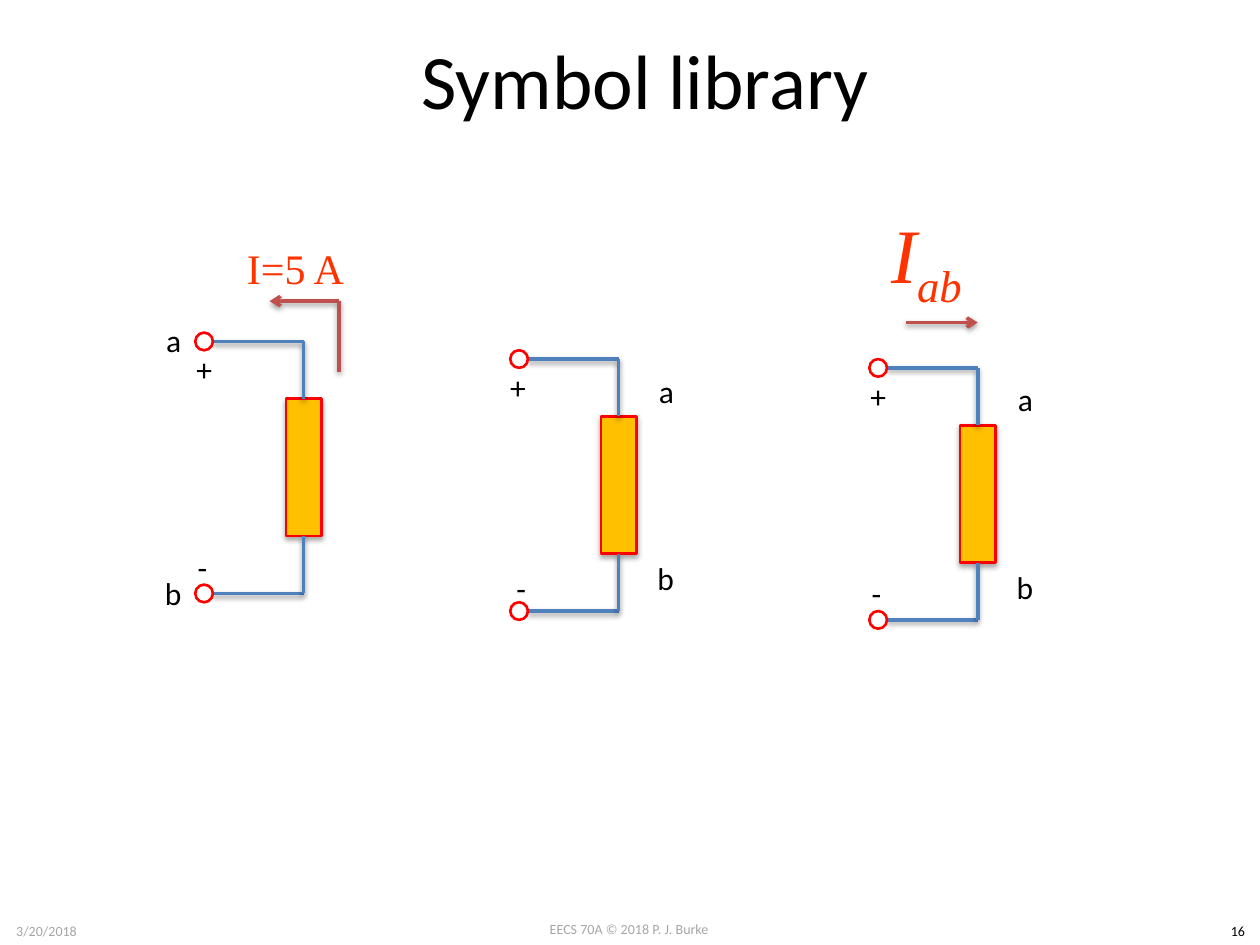
from lxml import etree
from pptx import Presentation
from pptx.dml.color import RGBColor
from pptx.enum import shapes, text
from pptx.oxml import ns
from pptx.util import Inches, Pt

COLORS = {"black": "000000", "gray": "A6A6A6", "wire": "4F81BD", "arrow": "C0504D",
          "current": "FF3300", "outline": "FF0000", "body": "FFC000"}

TITLE = "Symbol library"
FOOTERS = [  # text, box, colour
    ("EECS 70A © 2018 P. J. Burke", (3.83, 7.26, 2.33, 0.24), "gray"),
    ("3/20/2018", (0, 7.27, 0.74, 0.24), "gray"),
    ("16", (9.65, 7.27, 0.35, 0.24), "black"),
]
# Centre of each symbol's upper terminal; label positions are relative to it.
SYMBOLS = [
    {"origin": (4.12, 2.85),
     "labels": {"a": (1.01, 0.05), "b": (1.0, 1.54), "+": (-0.17, 0.02), "-": (-0.12, 1.62)}},
    {"origin": (6.97, 2.92),
     "labels": {"a": (1.01, 0.05), "b": (1.0, 1.54), "+": (-0.16, 0.02), "-": (-0.15, 1.59)}},
    {"origin": (1.62, 2.71),
     "labels": {"a": (-0.4, -0.21), "b": (-0.41, 1.8), "+": (-0.16, 0.02), "-": (-0.15, 1.59)}},
]
LABEL_WIDTHS = {"a": 0.32, "b": 0.34, "+": 0.33, "-": 0.28}
CURRENT_LINES = [  # start, end, has arrowhead
    ((7.19, 2.56), (7.76, 2.56), True),
    ((2.69, 2.39), (2.14, 2.39), True),
    ((2.69, 2.95), (2.69, 2.39), False),
]
HEIGHT, RAIL = 2.0, 0.79
BODY_LENGTH, BODY_WIDTH = 1.09, 0.28
TERMINAL = 0.14


def color(name):
    return RGBColor.from_string(COLORS[name])


def add_shadow(shape, alpha, distance):
    """Cast a soft shadow straight down; alpha in percent, distance in points."""
    effects = etree.SubElement(shape._element.spPr, ns.qn("a:effectLst"))
    shadow = etree.SubElement(effects, ns.qn("a:outerShdw"), blurRad=str(Pt(3.1)),
                              dist=str(Pt(distance)), dir="5400000", rotWithShape="0")
    tint = etree.SubElement(shadow, ns.qn("a:srgbClr"), val=COLORS["black"])
    etree.SubElement(tint, ns.qn("a:alpha"), val=str(alpha * 1000))


def write(shape, content, size=18, font="Calibri", fill="black", align=text.PP_ALIGN.CENTER,
          anchor=text.MSO_ANCHOR.TOP, wrap=True, italic=False, subscript=""):
    frame = shape.text_frame
    frame.word_wrap = wrap
    frame.vertical_anchor = anchor
    paragraph = frame.paragraphs[0]
    paragraph.alignment = align
    for part in filter(None, (content, subscript)):
        run = paragraph.add_run()
        run.text = part
        run.font.size = Pt(size)
        run.font.name = font
        run.font.italic = italic
        run.font.color.rgb = color(fill)
    if subscript:
        run.font._element.set("baseline", "-25000")


def add_text(slide, content, box, **style):
    write(slide.shapes.add_textbox(*map(Inches, box)), content, **style)


def add_line(slide, start, end, stroke, arrowhead=False):
    line = slide.shapes.add_connector(shapes.MSO_CONNECTOR.STRAIGHT, *map(Inches, start + end))
    line.line.color.rgb = color(stroke)
    line.line.width = Pt(2)
    if arrowhead:
        etree.SubElement(line.line._get_or_add_ln(), ns.qn("a:tailEnd"), type="arrow")
    add_shadow(line, 38, 1.6)


def add_outlined(slide, kind, center, width, height):
    x, y = center
    box = (x - width / 2, y - height / 2, width, height)
    shape = slide.shapes.add_shape(kind, *map(Inches, box))
    shape.line.color.rgb = color("outline")
    shape.line.width = Pt(1.5)
    return shape


def add_symbol(slide, origin, labels):
    x, top = origin
    rail, bottom, middle = x + RAIL, top + HEIGHT, top + HEIGHT / 2

    body = add_outlined(slide, shapes.MSO_SHAPE.RECTANGLE, (rail, middle),
                        BODY_LENGTH, BODY_WIDTH)
    body.rotation = 90
    body.fill.solid()
    body.fill.fore_color.rgb = color("body")
    add_shadow(body, 35, 1.8)

    for y, body_end in ((bottom, middle + BODY_LENGTH / 2), (top, middle - BODY_LENGTH / 2)):
        add_line(slide, (x + TERMINAL / 2, y), (rail, y), "wire")
        add_line(slide, (rail, body_end), (rail, y), "wire")
        terminal = add_outlined(slide, shapes.MSO_SHAPE.OVAL, (x, y), TERMINAL, TERMINAL)
        terminal.fill.background()
        terminal.shadow.inherit = False

    for label, (dx, dy) in labels.items():
        add_text(slide, label, (x + dx, top + dy, LABEL_WIDTHS[label], 0.4),
                 align=text.PP_ALIGN.LEFT, wrap=False)


def main():
    presentation = Presentation()
    presentation.slide_width, presentation.slide_height = Inches(10), Inches(7.5)
    slide = presentation.slides.add_slide(presentation.slide_layouts[5])

    title = slide.shapes.title
    title.left, title.top, title.width, title.height = map(Inches, (0.62, 0, 9, 1.25))
    write(title, TITLE, size=44, anchor=text.MSO_ANCHOR.MIDDLE)

    for content, box, fill in FOOTERS:
        add_text(slide, content, box, size=8, fill=fill)
    for symbol in SYMBOLS:
        add_symbol(slide, **symbol)
    for start, end, arrowhead in CURRENT_LINES:
        add_line(slide, start, end, "arrow", arrowhead)

    current = {"font": "Times New Roman", "fill": "current", "anchor": text.MSO_ANCHOR.MIDDLE}
    add_text(slide, "I", (6.73, 1.55, 1.25, 1.01), size=44, italic=True, subscript="ab", **current)
    add_text(slide, "I=5 A", (1.75, 1.76, 1.19, 0.73), size=24, **current)

    presentation.save("out.pptx")


if __name__ == "__main__":
    main()
